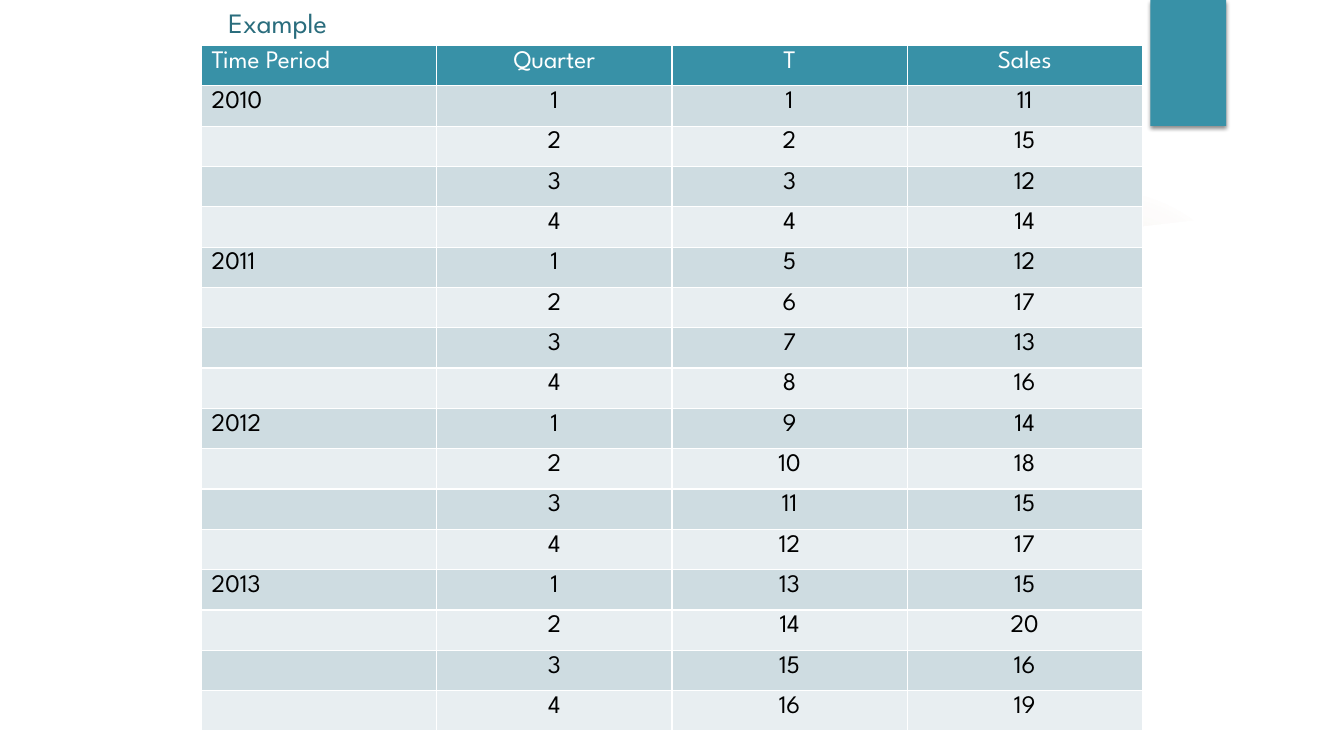
from lxml import etree
from pptx import Presentation
from pptx.dml.color import RGBColor
from pptx.enum.shapes import MSO_SHAPE
from pptx.enum.text import MSO_ANCHOR, PP_ALIGN
from pptx.oxml.ns import qn
from pptx.util import Pt

RECTANGLE, OVAL = MSO_SHAPE.RECTANGLE, MSO_SHAPE.OVAL
MIDDLE = MSO_ANCHOR.MIDDLE
LEFT, CENTER = PP_ALIGN.LEFT, PP_ALIGN.CENTER

TEAL = RGBColor(0x38, 0x91, 0xA7)
DARK_TEAL = RGBColor(0x2A, 0x6D, 0x7D)
DARK_BAND = RGBColor(0xCE, 0xDC, 0xE1)
LIGHT_BAND = RGBColor(0xE8, 0xEE, 0xF1)
BROWN = RGBColor(0x96, 0x43, 0x05)
WHITE = RGBColor(0xFF, 0xFF, 0xFF)
BLACK = RGBColor(0, 0, 0)
FONT = "League Spartan"

# Glows: left, top, diameter, then (position, opacity) stops in percent
GLOWS = [
    (0, 210, 330, [(0, 11), (36, 10), (75, 0)]),
    (0, 228, 186, [(0, 8), (36, 8), (72, 0)]),
    (677.5, 462, 78, [(0, 14), (36, 7), (66, 0)]),
    (677.5, 132, 222, [(0, 7), (36, 6), (69, 0)]),
    (630, 0.5, 126, [(0, 14), (36, 7), (73, 0)]),
]
SWOOSH = [(670.7, 158.4), (789.8, 176.4), (927.1, 176.2), (928.5, 141.3), (876.3, 148.4),
          (833.3, 151.9), (798.8, 154.1), (750.2, 155.1), (668.8, 152.7)]
PANEL = [(36, 146.9), (36, 504), (924.5, 504), (924.5, 146.9), (864, 156.2),
         (783.4, 165.6), (702.7, 172.1), (624.2, 176.4), (547.2, 178.2), (473, 178.6),
         (402.5, 177.1), (319.7, 173.5), (231.1, 167.8), (155.5, 161.3), (97.2, 154.8),
         (56.9, 149.8)]

HEADINGS = ["Time Period", "Quarter", "T", "Sales"]
FIRST_YEAR = 2010
SALES = [11, 15, 12, 14, 12, 17, 13, 16, 14, 18, 15, 17, 15, 20, 16, 19]


def add_child(parent, tag, **attributes):
    child = etree.SubElement(parent, qn(tag))
    for name, value in attributes.items():
        child.set(name, str(value))
    return child


def style_shape(shape, color):
    shape.shadow.inherit = False
    shape.fill.solid()
    shape.fill.fore_color.rgb = color
    shape.line.fill.background()


def style_span(span, size, color):
    span.font.name = FONT
    span.font.size = Pt(size)
    span.font.bold = False
    span.font.color.rgb = color


def add_glow(page, left, top, size, stops):
    glow = page.shapes.add_shape(OVAL, Pt(left), Pt(top), Pt(size), Pt(size))
    style_shape(glow, BROWN)
    gradient = etree.Element(qn("a:gradFill"), rotWithShape="1")
    stop_list = add_child(gradient, "a:gsLst")
    for position, opacity in stops:
        stop = add_child(stop_list, "a:gs", pos=position * 1000)
        color = add_child(stop, "a:srgbClr", val=BROWN)
        add_child(color, "a:alpha", val=opacity * 1000)
    circle = add_child(gradient, "a:path", path="circle")
    add_child(circle, "a:fillToRect", l=50000, t=50000, r=50000, b=50000)
    properties = glow.element.spPr
    properties.replace(properties.find(qn("a:solidFill")), gradient)


def add_outline(page, left, top, *contours):
    builder = None
    for contour in contours:
        (start_x, start_y), *others = [(Pt(left + x), Pt(top + y)) for x, y in contour]
        if builder is None:
            builder = page.shapes.build_freeform(start_x, start_y)
        else:
            builder.move_to(start_x, start_y)
        builder.add_line_segments(others)
    outline = builder.convert_to_shape()
    style_shape(outline, WHITE)
    return outline


def add_backdrop(page, left, top, width, height):
    # Soft glows
    for glow_left, glow_top, size, stops in GLOWS:
        add_glow(page, left + glow_left, top + glow_top, size, stops)

    # Translucent swoosh
    swoosh = add_outline(page, left, top, SWOOSH)
    swoosh.rotation = 350.2
    color = swoosh.element.spPr.find(qn("a:solidFill")).find(qn("a:srgbClr"))
    add_child(color, "a:alpha", val=20000)

    # Panel with a curved top, and a frame around the page
    add_outline(page, left, top, PANEL)
    margin = 37.5
    right, bottom = width - margin, height - margin
    add_outline(page, left, top,
                [(0, 0), (0, height), (width, height), (width, 0)],
                [(right, bottom), (margin, bottom), (margin, margin), (right, margin)])


def add_tab(page, left, top, width, height):
    tab = page.shapes.add_shape(RECTANGLE, Pt(left), Pt(top), Pt(width), Pt(height))
    style_shape(tab, TEAL)
    effects = tab.element.spPr.find(qn("a:effectLst"))
    shadow = add_child(effects, "a:outerShdw", blurRad=Pt(3), dist=Pt(2),
                       dir=90 * 60000, rotWithShape=0)
    add_child(add_child(shadow, "a:srgbClr", val=BLACK), "a:alpha", val=45000)


def add_title(page, left, top, width, height):
    title = page.shapes.title
    title.left, title.top, title.width, title.height = map(Pt, (left, top, width, height))
    frame = title.text_frame
    frame.text = "Example"
    frame.vertical_anchor = MIDDLE
    para = frame.paragraphs[0]
    para.alignment = LEFT
    style_span(para.runs[0], 20, DARK_TEAL)
    # Bring the title in front of the backdrop
    title.element.getparent().append(title.element)


def fill_cell(cell, text, alignment, text_color, fill_color):
    # Borders come before the fill in the cell properties
    properties = cell._tc.get_or_add_tcPr()
    for side in ("a:lnL", "a:lnR", "a:lnT", "a:lnB"):
        fill = add_child(add_child(properties, side, w=Pt(1)), "a:solidFill")
        add_child(fill, "a:srgbClr", val=WHITE)
    cell.fill.solid()
    cell.fill.fore_color.rgb = fill_color

    cell.text_frame.text = text
    para = cell.text_frame.paragraphs[0]
    para.alignment = alignment
    for span in para.runs:
        style_span(span, 18, text_color)
    if not text:
        ending = add_child(para._p, "a:endParaRPr", sz=1800)
        add_child(ending, "a:latin", typeface=FONT)


def add_sales_table(page, left, top, width, height):
    rows = [HEADINGS]
    for index, sales in enumerate(SALES):
        year, quarter = divmod(index, 4)
        period = "" if quarter else str(FIRST_YEAR + year)
        rows.append([period, str(quarter + 1), str(index + 1), str(sales)])

    table = page.shapes.add_table(len(rows), len(HEADINGS), Pt(left), Pt(top),
                                  Pt(width), Pt(height)).table
    for column in table.columns:
        column.width = Pt(width / len(HEADINGS))
    for row_index, values in enumerate(rows):
        table.rows[row_index].height = Pt(height / len(rows))
        band = DARK_BAND if row_index % 2 else LIGHT_BAND
        fill_color, text_color = (band, BLACK) if row_index else (TEAL, WHITE)
        for column_index, text in enumerate(values):
            alignment = CENTER if column_index else LEFT
            fill_cell(table.cell(row_index, column_index), text, alignment,
                      text_color, fill_color)


def main():
    deck = Presentation()
    deck.slide_width, deck.slide_height = Pt(960), Pt(540)
    page = deck.slides.add_slide(deck.slide_layouts[5])
    add_backdrop(page, 0, 0, 960, 540)
    add_tab(page, 821.8, 0, 54, 90)
    add_title(page, 156, 0, 588, 32)
    add_sales_table(page, 144, 32.5, 672, 489.94)
    deck.save("out.pptx")


if __name__ == "__main__":
    main()
